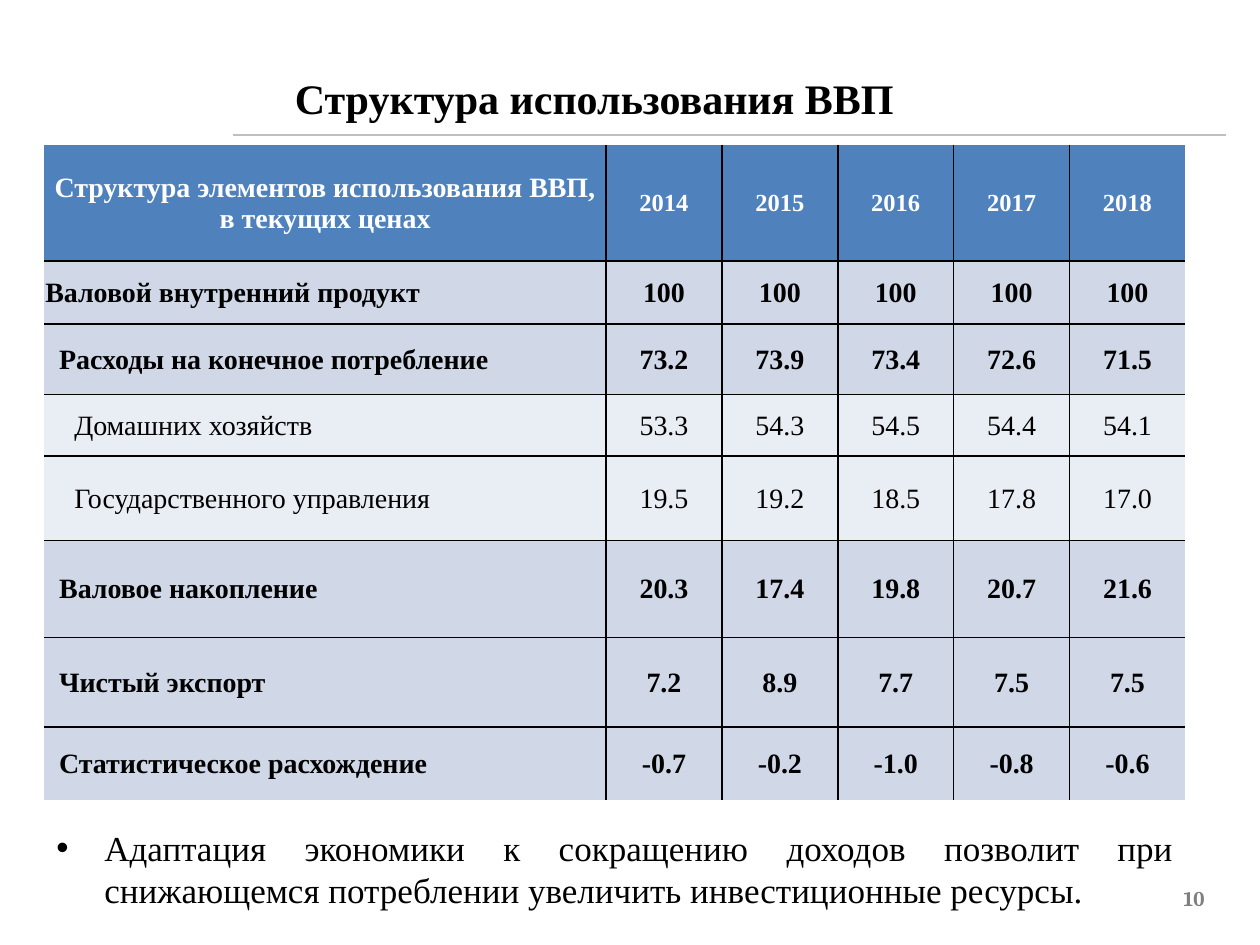
from lxml.etree import SubElement
from pptx import Presentation
from pptx.dml.color import RGBColor
from pptx.enum.text import MSO_ANCHOR, MSO_AUTO_SIZE, PP_ALIGN
from pptx.oxml import parse_xml
from pptx.oxml.ns import nsdecls, qn
from pptx.util import Inches, Pt

COLORS = {
    "black": "000000", "white": "FFFFFF", "rule": "BFBFBF", "number": "7F7F7F",
    "header": "4F81BD", "total": "D0D8E8", "detail": "E9EDF4",
}
FONT = "Times New Roman"
HEADER = ["Структура элементов использования ВВП,\nв текущих ценах",
          "2014", "2015", "2016", "2017", "2018"]
# Indent level, row height, label and yearly values
ROWS = [
    (0, 0.5, "Валовой внутренний продукт", "100 100 100 100 100"),
    (1, 0.56, "Расходы на конечное потребление", "73.2 73.9 73.4 72.6 71.5"),
    (2, 0.49, "Домашних хозяйств", "53.3 54.3 54.5 54.4 54.1"),
    (2, 0.67, "Государственного управления", "19.5 19.2 18.5 17.8 17.0"),
    (1, 0.77, "Валовое накопление", "20.3 17.4 19.8 20.7 21.6"),
    (1, 0.71, "Чистый экспорт", "7.2 8.9 7.7 7.5 7.5"),
    (1, 0.58, "Статистическое расхождение", "-0.7 -0.2 -1.0 -0.8 -0.6"),
]


def rgb(name):
    return RGBColor.from_string(COLORS[name])


def write_text(tf, text, size=16, color="black", bold=False, font=FONT,
               align=PP_ALIGN.LEFT, margin=0, indent=0, bullet=None):
    for i, line in enumerate(text.split("\n")):
        p = tf.paragraphs[0] if i == 0 else tf.add_paragraph()
        p.alignment = align
        pPr = p._p.get_or_add_pPr()
        pPr.set("marL", str(Inches(margin)))
        pPr.set("indent", str(Inches(indent)))
        if bullet:
            SubElement(pPr, qn("a:buFont"), typeface="Arial")
            SubElement(pPr, qn("a:buChar"), char=bullet)
        r = p.add_run()
        r.text = line
        r.font.name = font
        r.font.size = Pt(size)
        r.font.bold = bold
        r.font.color.rgb = rgb(color)


def add_text_box(s, left, top, width, height, text, wrap=True, inset=None,
                 anchor=MSO_ANCHOR.TOP, **fmt):
    box = s.shapes.add_textbox(Inches(left), Inches(top), Inches(width), Inches(height))
    tf = box.text_frame
    tf.word_wrap = wrap
    tf.vertical_anchor = anchor
    if inset is not None:
        tf.margin_left = tf.margin_right = tf.margin_top = tf.margin_bottom = Inches(inset)
    write_text(tf, text, **fmt)


def set_title(s, text):
    title = s.shapes.title
    title.left, title.top = Inches(1.85), Inches(0.52)
    title.width, title.height = Inches(5.59), Inches(0.51)
    title.text_frame.auto_size = MSO_AUTO_SIZE.SHAPE_TO_FIT_TEXT
    write_text(title.text_frame, text, size=24, bold=True, indent=0.39)


def add_rule(s, left, right, y):
    line = s.shapes.add_connector(1, Inches(left), Inches(y), Inches(right), Inches(y))
    line.line.color.rgb = rgb("rule")
    line.line.width = Pt(1)
    SubElement(line._element.spPr, qn("a:effectLst"))


def set_borders(cell, inner):
    """Draw the sides in inner; leave the outer edges of the table open."""
    tcPr = cell._tc.get_or_add_tcPr()
    for i, side in enumerate("LRTB"):
        fill = (f'<a:solidFill><a:srgbClr val="{COLORS["black"]}"/></a:solidFill>'
                if side in inner else "<a:noFill/>")
        tcPr.insert(i, parse_xml(
            f'<a:ln{side} {nsdecls("a")} w="{Pt(1)}">{fill}</a:ln{side}>'))


def fill_cell(cell, text, fill, inset=0.01, **fmt):
    cell.margin_left = Inches(inset)
    cell.margin_right = cell.margin_top = Inches(0.01)
    cell.margin_bottom = 0
    cell.vertical_anchor = MSO_ANCHOR.MIDDLE
    cell.fill.solid()
    cell.fill.fore_color.rgb = rgb(fill)
    write_text(cell.text_frame, text, **fmt)


def add_gdp_table(s):
    widths = [4.46] + [0.92] * 5
    heights = [0.92] + [row[1] for row in ROWS]
    table = s.shapes.add_table(len(heights), len(widths), Inches(0.35), Inches(1.15),
                               Inches(sum(widths)), Inches(sum(heights))).table
    for col, width in zip(table.columns, widths):
        col.width = Inches(width)
    for row, height in zip(table.rows, heights):
        row.height = Inches(height)

    # Header row
    for c, text in enumerate(HEADER):
        fill_cell(table.cell(0, c), text, "header", size=14 if c else 16,
                  color="white", bold=True, align=PP_ALIGN.CENTER)

    # Label and values of each component
    for r, (level, _, label, values) in enumerate(ROWS, 1):
        fmt = {"fill": "detail" if level == 2 else "total", "bold": level < 2}
        fill_cell(table.cell(r, 0), label, inset=max(0.01, 0.12 * level), **fmt)
        for c, value in enumerate(values.split(), 1):
            fill_cell(table.cell(r, c), value, align=PP_ALIGN.CENTER, **fmt)

    # Inner grid
    last_row, last_col = len(heights) - 1, len(widths) - 1
    for r in range(len(heights)):
        for c in range(len(widths)):
            sides = {"L": c > 0, "R": c < last_col, "T": r > 0, "B": r < last_row}
            set_borders(table.cell(r, c), [k for k, drawn in sides.items() if drawn])


def main():
    prs = Presentation()
    prs.slide_width, prs.slide_height = Inches(10), Inches(7.5)
    s = prs.slides.add_slide(prs.slide_layouts[5])

    # Heading and page number
    add_rule(s, 1.85, 9.73, 1.07)
    add_text_box(s, 9.08, 7.06, 0.48, 0.14, "10", wrap=False, inset=0,
                 anchor=MSO_ANCHOR.MIDDLE, size=12, color="number", bold=True,
                 font="Cambria", align=PP_ALIGN.RIGHT)
    set_title(s, "Структура использования ВВП")

    # Conclusion and table
    add_text_box(s, 0.35, 6.51, 9.06, 0.77,
                 "Адаптация экономики к сокращению доходов позволит при "
                 "снижающемся потреблении увеличить инвестиционные ресурсы.",
                 size=20, align=PP_ALIGN.JUSTIFY, margin=0.38, indent=-0.38, bullet="•")
    add_gdp_table(s)
    prs.save("out.pptx")


if __name__ == "__main__":
    main()
